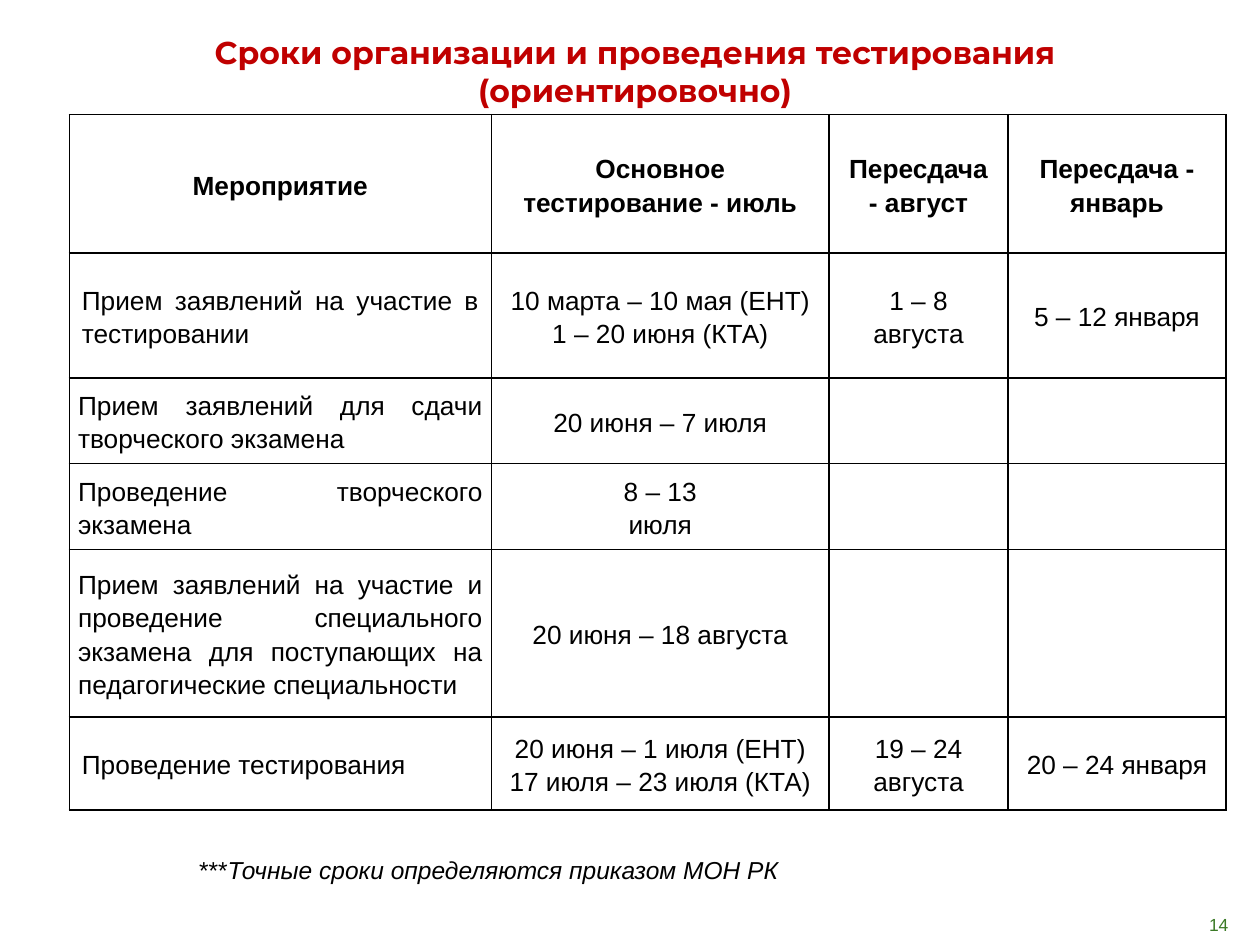
from lxml import etree
from pptx import Presentation
from pptx.dml.color import RGBColor
from pptx.enum.text import MSO_ANCHOR, MSO_AUTO_SIZE, PP_ALIGN
from pptx.oxml.ns import qn
from pptx.util import Inches, Pt

LEFT, MID, RIGHT, JUST = PP_ALIGN.LEFT, PP_ALIGN.CENTER, PP_ALIGN.RIGHT, PP_ALIGN.JUSTIFY
TOP, CENTER, BOTTOM = MSO_ANCHOR.TOP, MSO_ANCHOR.MIDDLE, MSO_ANCHOR.BOTTOM
FIXED = MSO_AUTO_SIZE.NONE

COLORS = {"red": "C00000", "black": "000000", "green": "3B7A26"}
COLS = [3.35, 2.68, 1.42, 1.73]
ROWS = [1.1, 0.99, 0.68, 0.68, 1.33, 0.74]
WIDE, TIGHT = (0.1, 0.05), (0.07, 0.04)
PADS = [WIDE, WIDE, TIGHT, TIGHT, TIGHT, WIDE]
DATES = [
    ["Мероприятие", "Основное тестирование - июль", "Пересдача - август",
     "Пересдача - январь"],
    ["Прием заявлений на участие в тестировании",
     "10 марта – 10 мая (ЕНТ)\n1 – 20 июня (КТА)", "1 – 8 августа", "5 – 12 января"],
    ["Прием заявлений для сдачи творческого экзамена", "20 июня – 7 июля", "", ""],
    ["Проведение творческого экзамена", "8 – 13\nиюля", "", ""],
    ["Прием заявлений на участие и проведение специального экзамена "
     "для поступающих на педагогические специальности", "20 июня – 18 августа", "", ""],
    ["Проведение тестирования", "20 июня – 1 июля (ЕНТ)\n17 июля – 23 июля (КТА)",
     "19 – 24 августа", "20 – 24 января"],
]


def style(font, color="black", **values):
    """Apply a colour and a dict of values to a font."""
    for name, value in ({"name": "Arial"} | values).items():
        setattr(font, name, value)
    font.color.rgb = RGBColor.from_string(COLORS[color])


def frame(body, pad, anchor):
    """Set margins (left, top, right, bottom), anchor and wrapping of a text body."""
    for side, size in zip(("left", "top", "right", "bottom"), pad):
        setattr(body, f"margin_{side}", Inches(size))
    body.vertical_anchor = anchor
    body.word_wrap = True
    body.auto_size = FIXED


def add_title(slide, text):
    """Place and format the title placeholder."""
    title = slide.shapes.title
    box = {"left": 0.51, "top": 0.21, "width": 9.06, "height": 0.71}
    for name, value in box.items():
        setattr(title, name, Inches(value))
    frame(title.text_frame, WIDE * 2, TOP)
    para = title.text_frame.paragraphs[0]
    para.alignment = MID
    run = para.add_run()
    run.text = text
    style(run.font, "red", name="Montserrat", size=Pt(18), bold=True)


def add_text(slide, box, runs, pad, anchor, align):
    """Add a one-paragraph text box from (text, format) pairs."""
    shape = slide.shapes.add_textbox(*map(Inches, box))
    frame(shape.text_frame, pad, anchor)
    para = shape.text_frame.paragraphs[0]
    para.alignment = align
    for text, values in runs:
        run = para.add_run()
        run.text = text
        style(run.font, **values)


def add_edges(cell):
    """Draw a thin black line on each side of a cell."""
    props = cell._tc.get_or_add_tcPr()
    for spot, side in enumerate(("lnL", "lnR", "lnT", "lnB")):
        line = etree.Element(qn(f"a:{side}"), w=str(Pt(1)))
        fill = etree.SubElement(line, qn("a:solidFill"))
        etree.SubElement(fill, qn("a:srgbClr"), val=COLORS["black"])
        props.insert(spot, line)


def fill_cell(cell, text, pad, align, bold):
    """Write and format the content of one cell."""
    cell.fill.background()
    add_edges(cell)
    cell.vertical_anchor = CENTER
    for side, size in zip(("left", "top", "right", "bottom"), pad * 2):
        setattr(cell, f"margin_{side}", Inches(size))
    cell.text = text
    for para in cell.text_frame.paragraphs:
        para.alignment = align
        para.line_spacing = 1.15
        style(para.font, size=Pt(15), bold=bold)
        for run in para.runs:
            style(run.font, size=Pt(15), bold=bold)


def add_dates(slide):
    """Add the table of test dates."""
    box = map(Inches, (0.55, 0.91, sum(COLS), sum(ROWS)))
    table = slide.shapes.add_table(len(ROWS), len(COLS), *box).table
    table.first_row = table.horz_banding = False
    for col, width in zip(table.columns, COLS):
        col.width = Inches(width)
    for r, (height, pad, texts) in enumerate(zip(ROWS, PADS, DATES)):
        table.rows[r].height = Inches(height)
        for c, text in enumerate(texts):
            align = JUST if r and not c else MID
            fill_cell(table.cell(r, c), text, pad, align, r == 0)


def main():
    """Build and save the slide."""
    deck = Presentation()
    deck.slide_width, deck.slide_height = Inches(10), Inches(7.5)
    slide = deck.slides.add_slide(deck.slide_layouts[5])
    add_title(slide, "Сроки организации и проведения тестирования (ориентировочно)")
    add_dates(slide)
    note = [("***", {"size": Pt(14)}),
            ("Точные сроки определяются приказом МОН РК", {"size": Pt(14), "italic": True})]
    add_text(slide, (0.51, 6.74, 9.22, 0.34), note, (1.07, 0.05, 0.1, 0.05), TOP, LEFT)
    page = [("14", {"color": "green", "size": Pt(10)})]
    add_text(slide, (8.92, 7.02, 0.83, 0.4), page, (0, 0, 0, 0), BOTTOM, RIGHT)
    deck.save("out.pptx")


if __name__ == "__main__":
    main()
